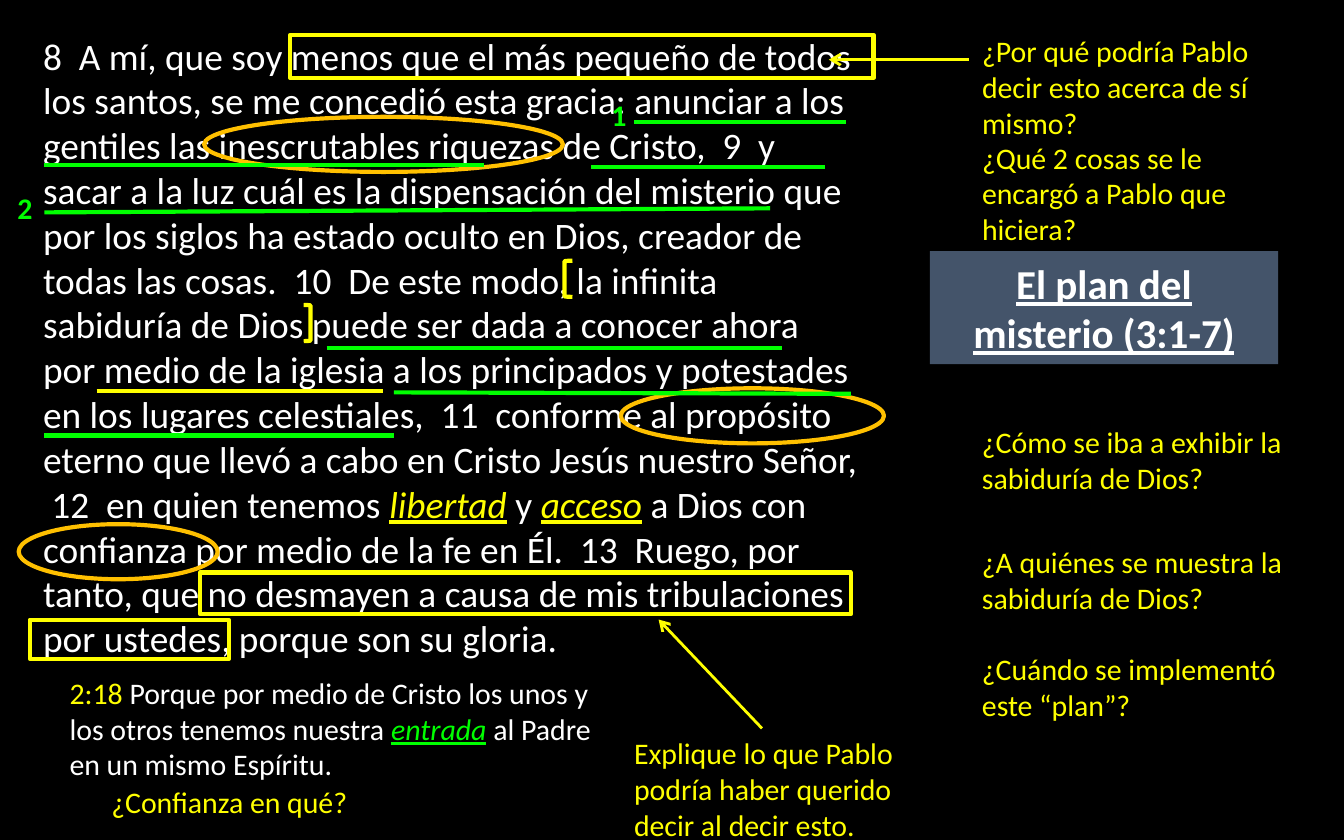
from lxml.etree import SubElement
from pptx import Presentation
from pptx.dml.color import RGBColor
from pptx.enum.shapes import MSO_CONNECTOR, MSO_SHAPE
from pptx.enum.text import MSO_ANCHOR, MSO_AUTO_SIZE, PP_ALIGN
from pptx.oxml.ns import qn
from pptx.util import Pt

WHITE, YELLOW, GREEN, ORANGE = "FFFFFF", "FFFF00", "00FF00", "FFC000"
SLATE, BLACK = "44546A", "000000"


def color(value):
    return RGBColor.from_string(value)


def add_run(paragraph, text, size, value, bold=False, italic=False, underline=False):
    run = paragraph.add_run()
    run.text = text
    run.font.name = "Calibri"
    run.font.size = Pt(size)
    run.font.color.rgb = color(value)
    run.font.bold = bold
    run.font.italic = italic
    run.font.underline = underline


def add_text(slide, left, top, width, height):
    shape = slide.shapes.add_textbox(Pt(left), Pt(top), Pt(width), Pt(height))
    shape.text_frame.word_wrap = True
    return shape.text_frame.paragraphs[0]


def add_outline(slide, kind, left, top, width, height, value):
    shape = slide.shapes.add_shape(kind, Pt(left), Pt(top), Pt(width), Pt(height))
    shape.shadow.inherit = False
    shape.fill.background()
    shape.line.color.rgb = color(value)
    shape.line.width = Pt(2.25)


def add_line(slide, x1, y1, x2, y2, value, width=2.25, arrow=False):
    connector = slide.shapes.add_connector(
        MSO_CONNECTOR.STRAIGHT, Pt(x1), Pt(y1), Pt(x2), Pt(y2))
    connector.line.color.rgb = color(value)
    connector.line.width = Pt(width)
    if arrow:
        SubElement(connector.line._get_or_add_ln(), qn("a:tailEnd"), type="arrow")
    SubElement(connector._element.spPr, qn("a:effectLst"))


def add_passage(slide, left, top, width, height):
    paragraph = add_text(slide, left, top, width, height)
    add_run(paragraph, "8  A mí, que soy menos que el más pequeño de todos los santos, "
            "se me concedió esta gracia: anunciar a los gentiles las inescrutables "
            "riquezas de Cristo,  9  y sacar a la luz cuál es la dispensación del "
            "misterio que por los siglos ha estado oculto en Dios, creador de todas "
            "las cosas.  10  De este modo, la infinita sabiduría de Dios puede ser "
            "dada a conocer ahora por medio de la iglesia a los principados y "
            "potestades en los lugares celestiales,  11  conforme al propósito eterno "
            "que llevó a cabo en Cristo Jesús nuestro Señor,  12  en quien tenemos ",
            20, WHITE)
    add_run(paragraph, "libertad", 20, YELLOW, italic=True, underline=True)
    add_run(paragraph, " y ", 20, WHITE)
    add_run(paragraph, "acceso", 20, YELLOW, italic=True, underline=True)
    add_run(paragraph, " a Dios con confianza por medio de la fe en Él.  13  Ruego, "
            "por tanto, que no desmayen a causa de mis tribulaciones por ustedes, "
            "porque son su gloria.", 20, WHITE)


def add_passage_marks(slide, left, top):
    box, oval = MSO_SHAPE.FLOWCHART_PROCESS, MSO_SHAPE.OVAL
    outlines = [
        (box, 139.5, 4.7, 312.5, 23, YELLOW),
        (box, 91.3, 292.7, 348.5, 22.3, YELLOW),
        (box, 0, 318, 106.6, 21, YELLOW),
        (oval, 93.4, 48.6, 192.2, 29.5, ORANGE),
        (oval, 316.6, 194, 141, 29.5, ORANGE),
        (oval, -6, 266.8, 106.6, 29.5, ORANGE),
        (MSO_SHAPE.LEFT_BRACKET, 286.4, 125.7, 4.3, 19.4, YELLOW),
        (MSO_SHAPE.RIGHT_BRACKET, 146.7, 149.4, 3.6, 19.4, YELLOW),
    ]
    for kind, x, y, width, height, value in outlines:
        add_outline(slide, kind, left + x, top + y, width, height, value)

    underlines = [
        (323.8, 51.5, 437, 51.5, GREEN),
        (7.8, 74.6, 243.2, 74.6, GREEN),
        (300.8, 75.3, 426, 75.3, GREEN),
        (7.8, 99.8, 396.6, 97.6, GREEN),
        (159, 172.5, 403, 172.5, GREEN),
        (195, 196.2, 439.8, 197, GREEN),
        (7.8, 219.3, 195, 219.3, GREEN),
        (35.8, 195.5, 189.2, 195.5, YELLOW),
    ]
    for x1, y1, x2, y2, value in underlines:
        add_line(slide, left + x1, top + y1, left + x2, top + y2, value)

    for number, x, y in (("1", 304.4, 34.2), ("2", -13.8, 84)):
        paragraph = add_text(slide, left + x, top + y, 26.6, 26.6)
        add_run(paragraph, number, 16, GREEN, bold=True)


def add_heading(slide, left, top, width, height):
    title = slide.shapes.title
    title.left, title.top = Pt(left), Pt(top)
    title.width, title.height = Pt(width), Pt(height)
    title.fill.solid()
    title.fill.fore_color.rgb = color(SLATE)
    frame = title.text_frame
    frame.word_wrap = True
    frame.auto_size = MSO_AUTO_SIZE.NONE
    frame.vertical_anchor = MSO_ANCHOR.MIDDLE
    paragraph = frame.paragraphs[0]
    paragraph.alignment = PP_ALIGN.CENTER
    add_run(paragraph, "El plan del misterio (3:1-7)", 22, WHITE, bold=True, underline=True)


def add_questions(slide, left, top, width):
    questions = [
        (0, width - 9, "¿Por qué podría Pablo decir esto acerca de sí mismo?"),
        (57, width - 9, "¿Qué 2 cosas se le encargó a Pablo que hiciera?"),
        (209.5, width, "¿Cómo se iba a exhibir la sabiduría de Dios?"),
        (273.6, width, "¿A quiénes se muestra la sabiduría de Dios?"),
        (331.2, width, "¿Cuándo se implementó este “plan”?"),
    ]
    for y, question_width, question in questions:
        paragraph = add_text(slide, left, top + y, question_width, 46)
        add_run(paragraph, question, 16, YELLOW)
    add_line(slide, left, top + 18, left - 75, top + 18, YELLOW, 1.5, arrow=True)


def add_cross_reference(slide, left, top, width, height):
    paragraph = add_text(slide, left, top, width, height)
    add_run(paragraph, "2:18 ", 16, YELLOW)
    add_run(paragraph, "Porque por medio de Cristo los unos y los otros tenemos nuestra ",
            16, WHITE)
    add_run(paragraph, "entrada", 16, GREEN, italic=True, underline=True)
    add_run(paragraph, " al Padre en un mismo Espíritu.", 16, WHITE)
    question = add_text(slide, left + 22.4, top + 58.4, 152, 26.6)
    add_run(question, "¿Confianza en qué?", 16, YELLOW)


def add_explanation(slide, left, top, width, height):
    paragraph = add_text(slide, left, top, width, height)
    add_run(paragraph, "Explique lo que Pablo podría haber querido decir al decir esto.",
            16, YELLOW)
    add_line(slide, left + 75.6, top, left + 20.2, top - 58.3, YELLOW, 1.5, arrow=True)


def main():
    presentation = Presentation()
    presentation.slide_width, presentation.slide_height = Pt(720), Pt(450)
    slide = presentation.slides.add_slide(presentation.slide_layouts[5])
    slide.background.fill.solid()
    slide.background.fill.fore_color.rgb = color(BLACK)
    add_passage(slide, 16, 14, 452, 346)
    add_passage_marks(slide, 16, 14)
    add_heading(slide, 498.2, 134.6, 186.5, 60.5)
    add_questions(slide, 519, 14, 191)
    add_cross_reference(slide, 30.2, 357.8, 297.4, 65.5)
    add_explanation(slide, 332.6, 390.2, 186.5, 46)
    presentation.save("out.pptx")


if __name__ == "__main__":
    main()
